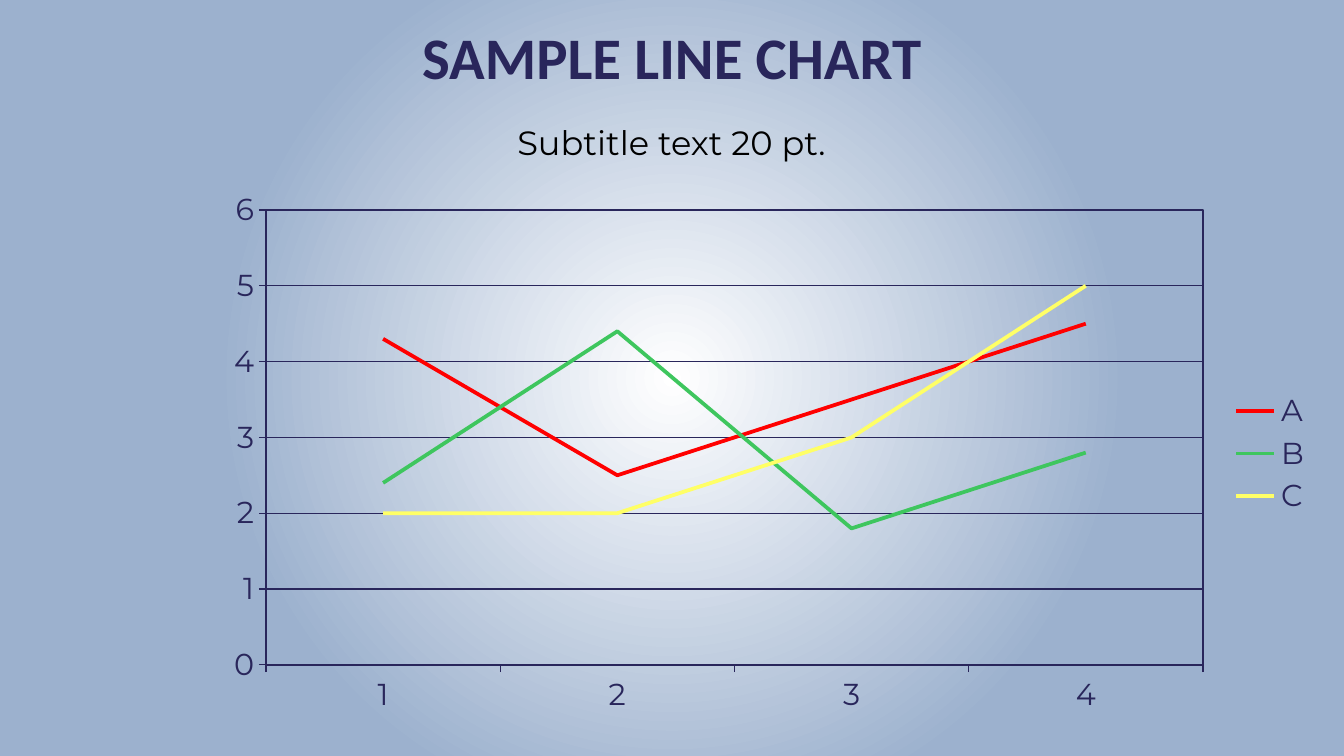
from lxml import etree
from pptx import Presentation, util as u
from pptx.chart.data import CategoryChartData
from pptx.dml.color import RGBColor
from pptx.enum import chart as ch, text as tx
from pptx.oxml import parse_xml
from pptx.oxml.ns import nsdecls, qn

NAVY = "29265B"
HEAD, BODY = "Calibri", "Montserrat"
LINES = {
    "A": ("FF0000", (4.3, 2.5, 3.5, 4.5)),
    "B": ("3EC65E", (2.4, 4.4, 1.8, 2.8)),
    "C": ("FFFF66", (2, 2, 3, 5)),
}


def px(n):
    return u.Emu(round(n * 914400 / 121))


def rgb(code):
    return RGBColor.from_string(code)


def style(font, name, size, color, bold=False):
    font.name, font.size, font.bold = name, u.Pt(size), bold
    font.color.rgb = rgb(color)


def stroke(line, color, width):
    line.color.rgb = rgb(color)
    line.width = u.Pt(width)


class Deck:
    """Holds the presentation and its current slide."""

    def __init__(self, width, height):
        self.prs = Presentation()
        self.prs.slide_width, self.prs.slide_height = px(width), px(height)
        self.slide = self.prs.slides.add_slide(self.prs.slide_layouts[1])

    def glow(self, inner, outer, reach):
        """Fill the background with a round gradient from the centre."""
        fill = self.slide.background.fill
        fill.gradient()
        stops = fill.gradient_stops
        for stop, color, pos in zip(stops, (inner, outer), (0, reach)):
            stop.color.rgb, stop.position = rgb(color), pos
        grad = self.slide.element.find(".//" + qn("a:gradFill"))
        grad.remove(grad.find(qn("a:lin")))
        grad.append(parse_xml(
            f'<a:path {nsdecls("a")} path="circle"><a:fillToRect '
            'l="50000" t="50000" r="50000" b="50000"/></a:path>'))

    def words(self, index, box, text, font, size, color, bold=False,
              anchor=tx.MSO_ANCHOR.TOP):
        """Place and fill a centred placeholder."""
        hold = self.slide.placeholders[index]
        hold.left, hold.top, hold.width, hold.height = map(px, box)
        frame = hold.text_frame
        frame.text = text
        frame.word_wrap = True
        frame.auto_size = tx.MSO_AUTO_SIZE.NONE
        frame.vertical_anchor = anchor
        frame.margin_left = frame.margin_right = px(6)
        frame.margin_top = frame.margin_bottom = px(6)
        para = frame.paragraphs[0]
        props = para._p.get_or_add_pPr()
        props.set("marL", "0")
        props.set("indent", "0")
        etree.SubElement(props, qn("a:buNone"))
        para.alignment = tx.PP_ALIGN.CENTER
        para.line_spacing, para.space_before = 0.9, u.Pt(0)
        style(para.runs[0].font, font, size, color, bold)

    def graph(self, box, plot, cats, lines):
        """Add a line chart; box and plot are left, top, width, height."""
        data = CategoryChartData()
        data.categories = cats
        for name, (_, vals) in lines.items():
            data.add_series(name, vals)
        chart = self.slide.shapes.add_chart(
            ch.XL_CHART_TYPE.LINE, *map(px, box), data).chart
        chart.has_title = False
        style(chart.font, BODY, 18, NAVY)

        for axis in (chart.category_axis, chart.value_axis):
            axis.major_tick_mark = ch.XL_TICK_MARK.OUTSIDE
            axis.minor_tick_mark = ch.XL_TICK_MARK.NONE
            style(axis.tick_labels.font, BODY, 18, NAVY)
            stroke(axis.format.line, NAVY, 0.75)
        scale = chart.value_axis
        scale.minimum_scale, scale.maximum_scale, scale.major_unit = 0, 6, 1
        scale.has_major_gridlines = True
        stroke(scale.major_gridlines.format.line, NAVY, 0.75)

        chart.has_legend = True
        chart.legend.position = ch.XL_LEGEND_POSITION.RIGHT
        chart.legend.include_in_layout = False
        style(chart.legend.font, BODY, 18, NAVY)

        for series in chart.plots[0].series:
            series.smooth = False
            series.marker.style = ch.XL_MARKER_STYLE.NONE
            stroke(series.format.line, lines[series.name][0], 2.25)
        self.frame(chart, box, plot)

    def frame(self, chart, box, plot):
        """Fix the inner plot area and outline it."""
        left, top, width, height = box
        parts = {"x": (plot[0] - left) / width, "y": (plot[1] - top) / height,
                 "w": plot[2] / width, "h": plot[3] / height}
        sizes = "".join(f'<c:{k} val="{v:.4f}"/>' for k, v in parts.items())
        area = chart._chartSpace.find(".//" + qn("c:plotArea"))
        for old in area.findall(qn("c:layout")):
            area.remove(old)
        area.insert(0, parse_xml(
            f'<c:layout {nsdecls("c")}><c:manualLayout>'
            '<c:layoutTarget val="inner"/><c:xMode val="edge"/>'
            f'<c:yMode val="edge"/>{sizes}</c:manualLayout></c:layout>'))
        area.append(parse_xml(
            f'<c:spPr {nsdecls("c", "a")}><a:noFill/><a:ln w="9525">'
            f'<a:solidFill><a:srgbClr val="{NAVY}"/></a:solidFill>'
            '</a:ln></c:spPr>'))


def main():
    deck = Deck(1344, 756)
    deck.glow("FFFFFF", "9CB1CE", 0.59)
    deck.words(0, (0, 25, 1344, 71), "SAMPLE LINE CHART", HEAD, 35, NAVY,
               bold=True, anchor=tx.MSO_ANCHOR.MIDDLE)
    deck.words(1, (36, 120, 1271, 582), "Subtitle text 20 pt.", BODY, 20,
               "000000")
    deck.graph((212, 181, 1112, 545), (266, 210, 937, 455),
               ("1", "2", "3", "4"), LINES)
    deck.prs.save("out.pptx")


if __name__ == "__main__":
    main()
